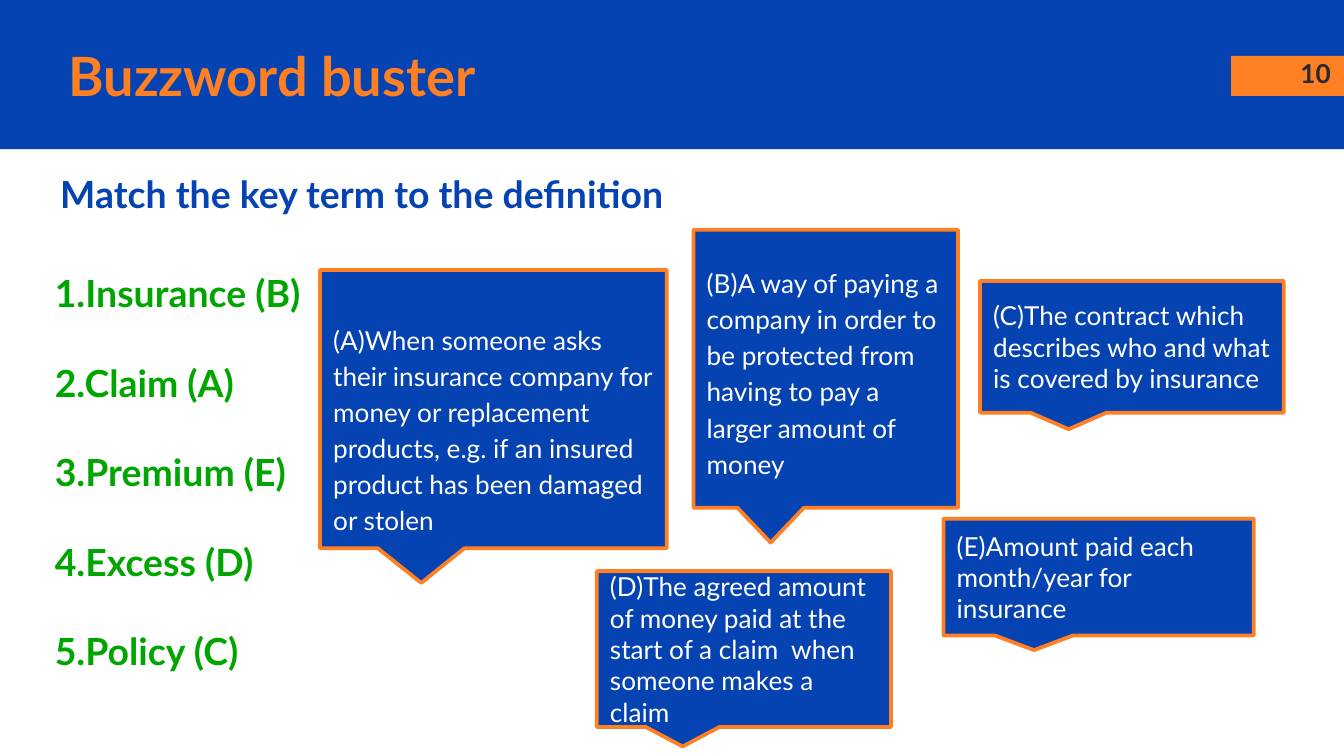
from pptx import Presentation
from pptx.dml.color import RGBColor
from pptx.enum.shapes import MSO_SHAPE as Shape
from pptx.enum.text import MSO_ANCHOR as Anchor, PP_ALIGN as Align
from pptx.util import Pt

BLUE = RGBColor(0x05, 0x43, 0xB3)
ORANGE = RGBColor(0xFF, 0x80, 0x22)
GREEN = RGBColor(0x00, 0xA5, 0x00)
DARK = RGBColor(0x26, 0x2A, 0x33)
WHITE = RGBColor(0xFF, 0xFF, 0xFF)

TERMS = ["1.Insurance (B)", "2.Claim (A)", "3.Premium (E)", "4.Excess (D)", "5.Policy (C)"]
CLUES = [
    ((525, 150.5, 162.7, 70.6), 1, 0,
     "(C)The contract which describes who and what is covered by insurance"),
    ((371.5, 123.1, 141.8, 149), 1.15, 2.5,
     "(B)A way of paying a company in order to be protected from having to pay "
     "a larger amount of money"),
    ((505.4, 277.9, 166.3, 62.6), 1, 0,
     "(E)Amount paid each month/year for insurance"),
    ((171.4, 144.7, 185.8, 149), 1.15, 20,
     "(A)When someone asks their insurance company for money or replacement "
     "products, e.g. if an insured product has been damaged or stolen"),
    ((319.7, 306, 157.7, 83.5), 1, 0,
     "(D)The agreed amount of money paid at the start of a claim  when someone makes a claim"),
]


def add_shape(slide, kind, box, line=None):
    """Add a filled shape: blue with an outline or bare."""
    shape = slide.shapes.add_shape(kind, *map(Pt, box))
    shape.shadow.inherit = False
    shape.fill.solid()
    shape.fill.fore_color.rgb = BLUE
    if line:
        shape.line.color.rgb = line
        shape.line.width = Pt(2)
    else:
        shape.line.fill.background()
    return shape


def set_text(shape, lines, size, color, bold=True, anchor=Anchor.TOP,
             align=Align.LEFT, pad=7.2, gap=0, lead=1):
    """Write one paragraph for each line in a shared style."""
    frame = shape.text_frame
    frame.word_wrap = True
    frame.vertical_anchor = anchor
    frame.margin_left = frame.margin_right = Pt(7.2)
    frame.margin_top = frame.margin_bottom = Pt(pad)
    frame.text = "\n".join(lines)
    for i, para in enumerate(frame.paragraphs):
        para.alignment = align
        para.line_spacing = lead
        if i and gap:
            para.space_before = Pt(gap)
        font = para.font
        font.name, font.size, font.bold = "Lato", Pt(size), bold
        font.color.rgb = color


def add_text(slide, box, lines, size, color, **style):
    """Add a text box with styled lines."""
    set_text(slide.shapes.add_textbox(*map(Pt, box)), lines, size, color, **style)


def add_header(slide, box, title, number):
    """Draw the title band with its page number tab."""
    left, top, width, height = box
    right = left + width
    add_shape(slide, Shape.RECTANGLE, box)
    tab = add_shape(slide, Shape.RECTANGLE, (right - 60.5, top + 30, 60.5, 21.5))
    tab.fill.fore_color.rgb = ORANGE
    add_text(slide, (right - 43.2, top + 23.8, 43.2, 31), [number], 14, DARK, align=Align.RIGHT)
    add_text(slide, (left + 29.5, top + 20.2, 547, 40.3), [title], 29, ORANGE,
             anchor=Anchor.MIDDLE)


def add_terms(slide, box, prompt, terms):
    """Place the prompt above the list of key terms."""
    left, top, width, height = box
    add_text(slide, (left + 2.9, top, width, 38.9), [prompt], 20, BLUE, anchor=Anchor.MIDDLE)
    add_text(slide, (left, top + 53.3, 236, height - 53.3), terms, 20, GREEN, gap=24)


def add_clue(slide, box, lead, drop, text):
    """Draw a definition callout, its text lowered by an extra top inset."""
    shape = add_shape(slide, Shape.ROUNDED_RECTANGULAR_CALLOUT, box, ORANGE)
    for i, value in enumerate((-0.208, 0.625, 0)):
        shape.adjustments[i] = value
    set_text(shape, [text], 14, WHITE, bold=False, anchor=Anchor.MIDDLE, pad=3.6, lead=lead)
    shape.text_frame.margin_top = Pt(3.6 + drop)


def main():
    """Build and save the slide."""
    deck = Presentation()
    deck.slide_width, deck.slide_height = Pt(720), Pt(405)
    slide = deck.slides.add_slide(deck.slide_layouts[6])
    add_header(slide, (0, 0, 720, 80), "Buzzword buster", "10")
    add_terms(slide, (22.3, 84.2, 637, 286), "Match the key term to the definition", TERMS)
    for clue in CLUES:
        add_clue(slide, *clue)
    deck.save("out.pptx")


if __name__ == "__main__":
    main()
